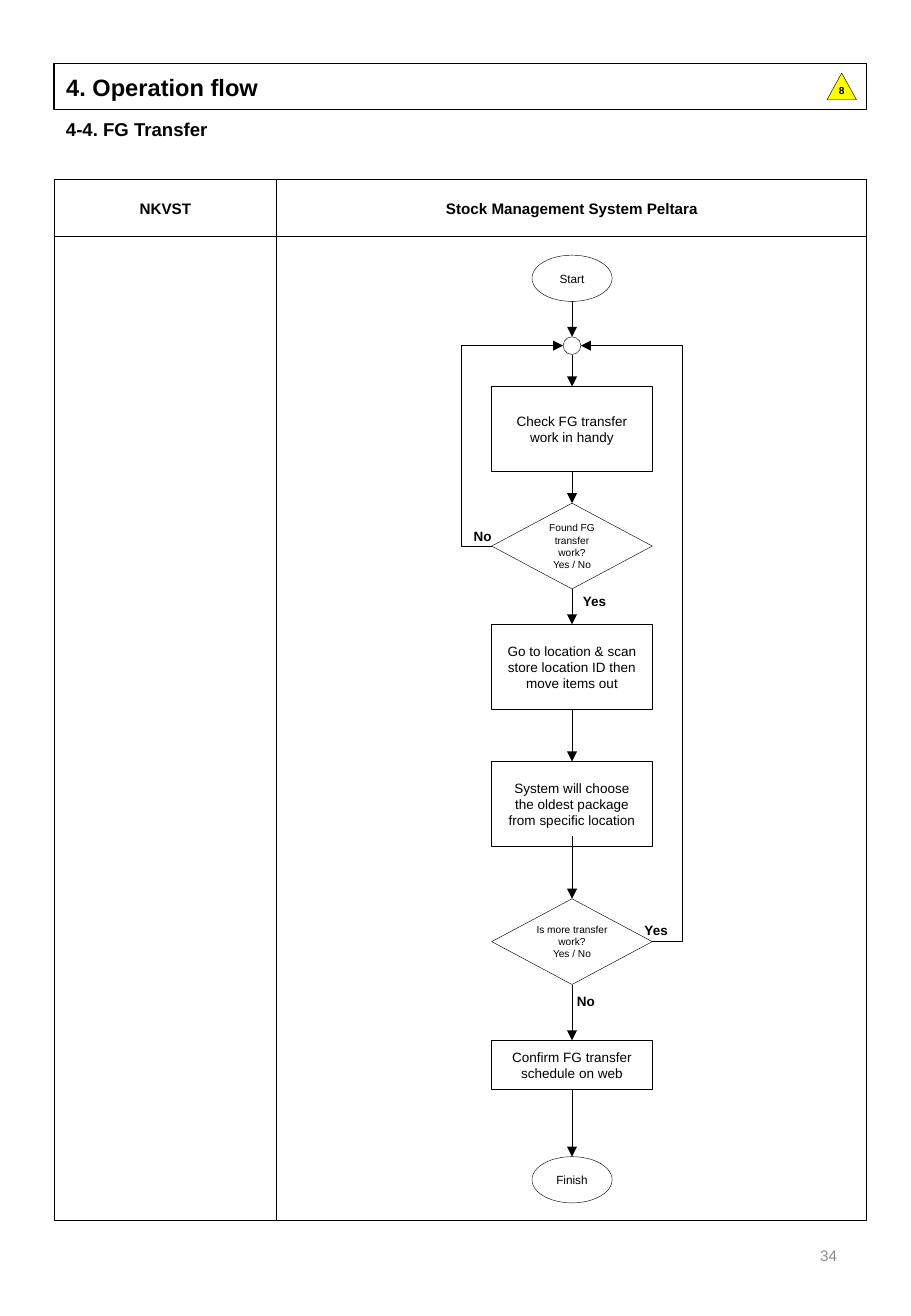
from dataclasses import dataclass

from lxml import etree
from pptx import Presentation
from pptx.dml.color import RGBColor
from pptx.enum.shapes import MSO_CONNECTOR, MSO_SHAPE
from pptx.enum.text import MSO_ANCHOR, MSO_AUTO_SIZE, PP_ALIGN
from pptx.oxml.ns import qn
from pptx.util import Pt

LEFT, CENTER, RIGHT = PP_ALIGN.LEFT, PP_ALIGN.CENTER, PP_ALIGN.RIGHT
TOP, MIDDLE = MSO_ANCHOR.TOP, MSO_ANCHOR.MIDDLE
STRAIGHT, ELBOW = MSO_CONNECTOR.STRAIGHT, MSO_CONNECTOR.ELBOW
RECTANGLE, OVAL = MSO_SHAPE.RECTANGLE, MSO_SHAPE.OVAL
DECISION, TRIANGLE = MSO_SHAPE.FLOWCHART_DECISION, MSO_SHAPE.ISOSCELES_TRIANGLE
SITE_TOP, SITE_BOTTOM = 0, 2
TITLE_ONLY = 5


@dataclass(frozen=True)
class Theme:
    font: str = "Arial"
    ink: RGBColor = RGBColor(0, 0, 0)
    muted: RGBColor = RGBColor(0x8C, 0x8C, 0x8C)
    badge: RGBColor = RGBColor(0xFF, 0xFF, 0)
    title: float = 14
    subtitle: float = 11
    header: float = 9
    step: float = 8
    terminal: float = 7
    small: float = 6
    hairline: float = 0.25
    arrow: float = 0.5
    title_line: float = 1


THEME = Theme()

TITLE = "4. Operation flow"
SUBTITLE = "4-4. FG Transfer"
REVISION = "8"
PAGE_NUMBER = "34"
HEADERS = ("NKVST", "Stock Management System Peltara")

# Kind and size of each step: shape, width, height, type size
KINDS = {
    "terminal": (OVAL, 47.5, 27.4, THEME.terminal),
    "junction": (OVAL, 10.5, 10.5, THEME.small),
    "action": (RECTANGLE, 95.2, 50.4, THEME.step),
    "short action": (RECTANGLE, 95.2, 29.2, THEME.step),
    "decision": (DECISION, 95.2, 50.8, THEME.small),
}
# name, kind, top, text
STEPS = [
    ("start", "terminal", 151.2, "Start"),
    ("merge", "junction", 199.6, ""),
    ("check", "action", 229, "Check FG transfer work in handy"),
    ("found", "decision", 298.2, "Found FG transfer work?\nYes / No"),
    ("scan", "action", 370, "Go to location & scan store location ID then move items out"),
    ("choose", "action", 451.2, "System will choose the oldest package from specific location"),
    ("more", "decision", 532.6, "Is more transfer work?\nYes / No"),
    ("confirm", "short action", 616.5, "Confirm FG transfer schedule on web"),
    ("finish", "terminal", 685.4, "Finish"),
]
ARROW_OVERLAP = {"choose": 6.2}
# decision, side it leaves from (-1 left, 1 right)
LOOPS = [("found", -1), ("more", 1)]
LOOP_REACH = 18
# text, left, top
BRANCHES = [("Yes", 334, 347.8), ("No", 267.8, 309.2), ("Yes", 370.6, 542.8), ("No", 329, 584.8)]
BRANCH_SIZE = (36.7, 16.6)

FRAME_LEFT, FRAME_WIDTH = 32, 481.7
FRAME_TOP, FRAME_HEIGHT, HEADER_HEIGHT = 106.2, 617, 33.9
DIVIDER = 164
FLOW_CENTER = 339.1


def points(*lengths):
    return [Pt(length) for length in lengths]


def write(shape, text, size, bold=False, align=CENTER, anchor=MIDDLE, color=THEME.ink):
    frame = shape.text_frame
    frame.text = text
    frame.word_wrap = True
    frame.auto_size = MSO_AUTO_SIZE.NONE
    frame.vertical_anchor = anchor
    for paragraph in frame.paragraphs:
        paragraph.alignment = align
        for run in paragraph.runs:
            run.font.name, run.font.size, run.font.bold = THEME.font, Pt(size), bold
            run.font.color.rgb = color


def outline(item, width):
    item.line.color.rgb = THEME.ink
    item.line.width = Pt(width)


def add_label(slide, box, text, size, **style):
    write(slide.shapes.add_textbox(*points(*box)), text, size, **style)


def add_outlined(slide, kind, box):
    shape = slide.shapes.add_shape(kind, *points(*box))
    shape.shadow.inherit = False
    shape.fill.background()
    outline(shape, THEME.hairline)
    return shape


def add_line(slide, kind, start, end, arrow=True):
    line = slide.shapes.add_connector(kind, *points(*start, *end))
    outline(line, THEME.arrow)
    properties = line._element.spPr
    etree.SubElement(properties, qn("a:effectLst"))
    if arrow:
        etree.SubElement(properties.find(qn("a:ln")), qn("a:tailEnd"), type="triangle")
    return line


def add_heading(slide):
    title = slide.shapes.title
    title.left, title.top, title.width, title.height = points(FRAME_LEFT, 37.7, FRAME_WIDTH, 27.2)
    write(title, TITLE, THEME.title, bold=True, align=LEFT)
    outline(title, THEME.title_line)
    add_label(slide, (FRAME_LEFT, 66.2, FRAME_WIDTH, 21), SUBTITLE, THEME.subtitle,
              bold=True, align=LEFT, anchor=TOP)
    badge = add_outlined(slide, TRIANGLE, (490.2, 43.3, 17.5, 15.8))
    badge.fill.solid()
    badge.fill.fore_color.rgb = THEME.badge
    write(badge, REVISION, THEME.small, bold=True)
    badge.text_frame.margin_top = 0
    # The digit is wider than the triangle's inner text area
    badge.text_frame.word_wrap = False


def add_frame(slide):
    for height in (FRAME_HEIGHT, HEADER_HEIGHT):
        add_outlined(slide, RECTANGLE, (FRAME_LEFT, FRAME_TOP, FRAME_WIDTH, height))
    add_line(slide, STRAIGHT, (DIVIDER, FRAME_TOP), (DIVIDER, FRAME_TOP + FRAME_HEIGHT), arrow=False)
    edges = (FRAME_LEFT, DIVIDER, FRAME_LEFT + FRAME_WIDTH)
    for text, left, right in zip(HEADERS, edges, edges[1:]):
        add_label(slide, (left, FRAME_TOP + 0.4, right - left, HEADER_HEIGHT), text,
                  THEME.header, bold=True)


def add_steps(slide):
    """Draw the steps and return each one's shape and box by name."""
    steps = {}
    for name, kind, top, text in STEPS:
        preset, width, height, size = KINDS[kind]
        box = (FLOW_CENTER - width / 2, top, width, height)
        shape = add_outlined(slide, preset, box)
        if text:
            write(shape, text, size)
        steps[name] = shape, box
    more_frame = steps["more"][0].text_frame
    more_frame.margin_left = more_frame.margin_right = 0
    return steps


def add_arrows(slide, steps):
    names = list(steps)
    for name, following in zip(names, names[1:]):
        shape, (_, top, _, height) = steps[name]
        target, (_, target_top, _, _) = steps[following]
        overlap = ARROW_OVERLAP.get(name, 0)
        arrow = add_line(slide, STRAIGHT, (FLOW_CENTER, top + height - overlap),
                         (FLOW_CENTER, target_top))
        if shape.auto_shape_type != OVAL and not overlap:
            arrow.begin_connect(shape, SITE_BOTTOM)
        arrow.end_connect(target, SITE_TOP)


def add_loops(slide, steps):
    _, (_, merge_top, merge_width, merge_height) = steps["merge"]
    for name, side in LOOPS:
        _, (_, top, width, height) = steps[name]
        start = FLOW_CENTER + side * width / 2, top + height / 2
        end = FLOW_CENTER + side * merge_width / 2, merge_top + merge_height / 2
        loop = add_line(slide, ELBOW, start, end)
        bend = round(-LOOP_REACH / abs(end[0] - start[0]) * 100000)
        guides = loop._element.spPr.find(qn("a:prstGeom")).find(qn("a:avLst"))
        etree.SubElement(guides, qn("a:gd"), name="adj1", fmla=f"val {bend}")


def main():
    presentation = Presentation()
    presentation.slide_width, presentation.slide_height = points(540, 779.8)
    slide = presentation.slides.add_slide(presentation.slide_layouts[TITLE_ONLY])
    add_heading(slide)
    add_frame(slide)
    steps = add_steps(slide)
    add_arrows(slide, steps)
    add_loops(slide, steps)
    for text, left, top in BRANCHES:
        add_label(slide, (left, top, *BRANCH_SIZE), text, THEME.step, bold=True)
    add_label(slide, (381.6, 722.9, 121.7, 41.8), PAGE_NUMBER, THEME.header,
              align=RIGHT, color=THEME.muted)
    presentation.save("out.pptx")


if __name__ == "__main__":
    main()
